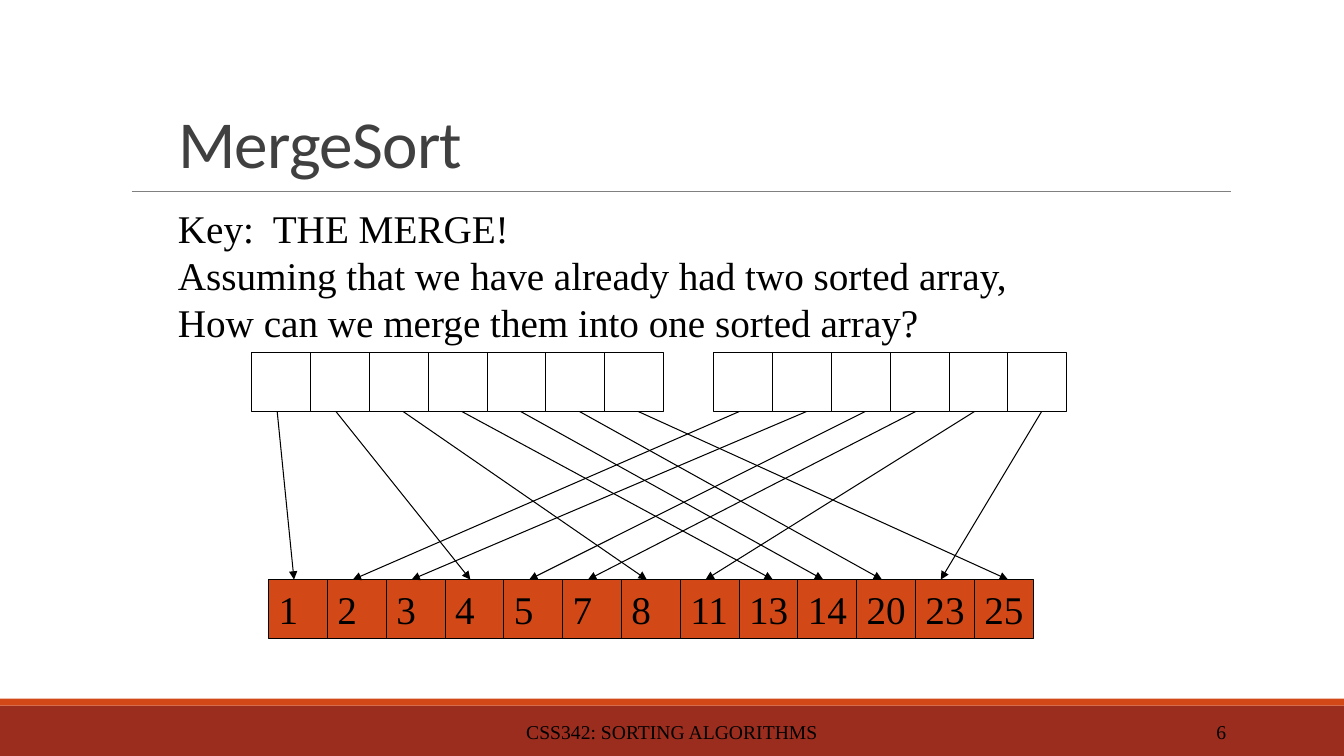
from lxml import etree
from pptx import Presentation
from pptx import util as u
from pptx.dml.color import RGBColor
from pptx.enum import shapes, text
from pptx.oxml.ns import qn

Pt = u.Pt
BLACK = RGBColor(0x00, 0x00, 0x00)
WHITE = RGBColor(0xFF, 0xFF, 0xFF)
ORANGE = RGBColor(0xD3, 0x48, 0x17)
RED = RGBColor(0x9B, 0x2D, 0x1F)
GRAY = RGBColor(0x80, 0x80, 0x80)
DARK = RGBColor(0x40, 0x40, 0x40)

CELL = 42
LEFT_VALUES = [1, 4, 8, 13, 14, 20, 25]
RIGHT_VALUES = [2, 3, 5, 7, 11, 23]
# Distance of each arrow's start from the left edge of its cell
LEFT_STARTS = [18, 18, 24, 24, 24, 24, 24]
RIGHT_STARTS = [18, 24, 24, 18, 18, 24]
WIDE_ENDS = {13, 25}  # arrows that end further right on their cell


def write(tf, content, size=28, font="Times New Roman", color=BLACK,
          align=text.PP_ALIGN.LEFT, anchor=text.MSO_ANCHOR.TOP,
          wrap=True, spacing=None, tracking=None):
    tf.word_wrap = wrap
    tf.vertical_anchor = anchor
    for i, line in enumerate(content.split("\n")):
        p = tf.paragraphs[0] if i == 0 else tf.add_paragraph()
        p.alignment = align
        if spacing is not None:
            p.line_spacing = spacing
        r = p.add_run()
        r.text = line
        r.font.name, r.font.size = font, Pt(size)
        r.font.color.rgb = color
        if tracking is not None:
            r._r.get_or_add_rPr().set("spc", str(tracking))


def add_text(s, x, y, w, h, content, **fmt):
    tb = s.shapes.add_textbox(Pt(x), Pt(y), Pt(w), Pt(h))
    write(tb.text_frame, content, **fmt)


def add_rect(s, x, y, w, h, fill, line=None):
    sp = s.shapes.add_shape(shapes.MSO_SHAPE.RECTANGLE, Pt(x), Pt(y), Pt(w), Pt(h))
    sp.shadow.inherit = False
    sp.fill.solid()
    sp.fill.fore_color.rgb = fill
    if line is None:
        sp.line.fill.background()
    else:
        sp.line.color.rgb = line
        sp.line.width = Pt(0.75)
    return sp


def add_line(s, x1, y1, x2, y2, color, width, arrow=False):
    c = s.shapes.add_connector(shapes.MSO_CONNECTOR.STRAIGHT,
                               Pt(x1), Pt(y1), Pt(x2), Pt(y2))
    c.line.color.rgb = color
    c.line.width = Pt(width)
    if arrow:
        etree.SubElement(c.line._get_or_add_ln(), qn("a:tailEnd"), type="triangle")
    etree.SubElement(c._element.spPr, qn("a:effectLst"))


def add_footer(s, x, y, w, h):
    add_rect(s, x, y + 5, w, h - 5, RED)
    add_rect(s, x, y, w, 5, ORANGE)
    fmt = dict(size=14, anchor=text.MSO_ANCHOR.MIDDLE)
    add_text(s, x + 290, y + 9.5, 380, 28.8, "CSS342: SORTING ALGORITHMS",
             align=text.PP_ALIGN.CENTER, **fmt)
    add_text(s, x + 780, y + 9.5, 103, 28.8, "6",
             align=text.PP_ALIGN.RIGHT, **fmt)


def add_header(s, x, y, w, h):
    title = s.shapes.title
    title.left, title.top, title.width, title.height = Pt(x), Pt(y), Pt(w), Pt(h)
    title.text_frame.auto_size = text.MSO_AUTO_SIZE.NONE
    write(title.text_frame, "MergeSort", size=48, font="Calibri", color=DARK,
          anchor=text.MSO_ANCHOR.BOTTOM, spacing=0.7, tracking=-50)
    add_line(s, x - 26, y + h + 5, x + w + 39, y + h + 5, GRAY, 0.5)


def add_merge(s, x, y, w, h):
    merged_x, merged_y = x + 12, y + h - CELL
    merged = sorted(LEFT_VALUES + RIGHT_VALUES)
    right_x = x + w - CELL * len(RIGHT_VALUES)

    # Merged array
    for i, value in enumerate(merged):
        sp = add_rect(s, merged_x + CELL * i, merged_y, CELL, CELL, ORANGE, BLACK)
        write(sp.text_frame, str(value), anchor=text.MSO_ANCHOR.MIDDLE, wrap=False)

    # Two sorted arrays, with an arrow from each cell to its merged place
    for row_x, values, starts in ((x, LEFT_VALUES, LEFT_STARTS),
                                  (right_x, RIGHT_VALUES, RIGHT_STARTS)):
        for i, (value, start) in enumerate(zip(values, starts)):
            cell_x = row_x + CELL * i
            end = 24 if value in WIDE_ENDS else 18
            add_rect(s, cell_x, y, CELL, CELL, WHITE, BLACK)
            add_line(s, cell_x + start, y + CELL,
                     merged_x + CELL * merged.index(value) + end, merged_y,
                     BLACK, 0.75, arrow=True)


def main():
    prs = Presentation()
    prs.slide_width, prs.slide_height = Pt(960), Pt(540)
    s = prs.slides.add_slide(prs.slide_layouts[5])
    add_footer(s, 0, 499, 960, 41)
    add_header(s, 120, 0, 720, 132)
    add_text(s, 120, 142.5, 669, 108.7,
             "Key:  THE MERGE!\n"
             "Assuming that we have already had two sorted array,\n"
             "How can we merge them into one sorted array?",
             spacing=Pt(33.6))
    add_merge(s, 180, 252, 582, 204)
    prs.save("out.pptx")


if __name__ == "__main__":
    main()
